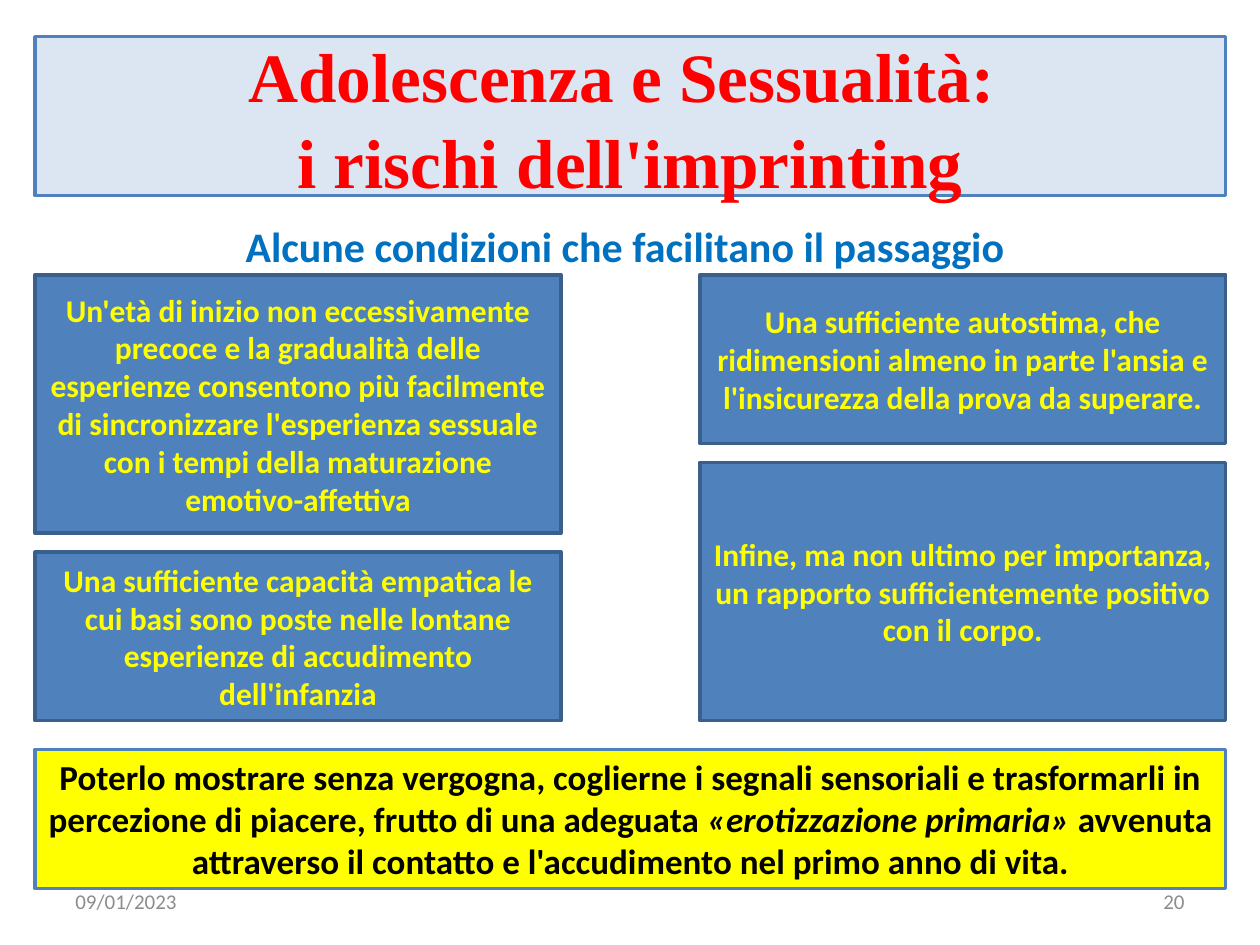
from pptx import Presentation
from pptx.dml.color import RGBColor
from pptx.enum.shapes import MSO_SHAPE as Shape
from pptx.enum.text import MSO_ANCHOR as Anchor, PP_ALIGN as Align
from pptx.util import Cm, Pt


def color(value):
    return RGBColor.from_string(value)


def add_block(place, texts, size, ink, fill=None, line=None, bold=True,
              align=Align.CENTER, anchor=Anchor.MIDDLE, face="Calibri"):
    box = [Cm(length) for length in place]
    if fill:
        block = slide.shapes.add_shape(Shape.RECTANGLE, *box)
        block.shadow.inherit = False
        block.fill.solid()
        block.fill.fore_color.rgb = color(fill)
        block.line.color.rgb = color(line)
        block.line.width = Pt(2)
    else:
        block = slide.shapes.add_textbox(*box)
    frame = block.text_frame
    frame.word_wrap = True
    frame.vertical_anchor = anchor
    paragraph = frame.paragraphs[0]
    paragraph.alignment = align
    font = paragraph.font
    font.name, font.size, font.bold = face, Pt(size), bold
    font.color.rgb = color(ink)
    if len(texts) == 1:
        paragraph.text = texts[0]
    else:
        for text in texts:
            paragraph.add_run().text = text
    return paragraph


prs = Presentation()
prs.slide_width, prs.slide_height = Cm(25.4), Cm(19.05)
slide = prs.slides.add_slide(prs.slide_layouts[6])

left, full_width = 0.71, 24
title = add_block((left, 0.74, full_width, 3.2),
                  ["Adolescenza e Sessualità: \vi rischi dell'imprinting"],
                  39.6, "FF0000", "DCE6F2", "4F81BD", face="Times New Roman")
title.line_spacing = 1.04

conclusion = add_block(
    (left, 15.11, full_width, 2.8),
    ["Poterlo mostrare senza vergogna, coglierne i segnali sensoriali e trasformarli in "
     "percezione di piacere, frutto di una adeguata ",
     "«erotizzazione primaria»",
     " avvenuta attraverso il contatto e l'accudimento nel primo anno di vita."],
    20, "000000", "FFFF00", "4F81BD", anchor=Anchor.TOP)
conclusion.runs[1].font.italic = True

for x, text, align in ((1.27, "09/01/2023", Align.LEFT), (18.2, "20", Align.RIGHT)):
    add_block((x, 17.66, 5.93, 1.01), [text], 12, "8C8C8C", bold=False, align=align)

add_block((0, 4.32, 25.4, 1.28), ["Alcune condizioni che facilitano il passaggio "],
          24, "0070C0", anchor=Anchor.TOP)

top, gap, card_width, tall, short = 5.54, 0.38, 10.6, 5.21, 3.4
columns = (
    (left, (
        (tall, "Un'età di inizio non eccessivamente precoce e la gradualità delle esperienze "
               "consentono più facilmente di sincronizzare l'esperienza sessuale con i tempi "
               "della maturazione emotivo-affettiva"),
        (short, "Una sufficiente capacità empatica le cui basi sono poste nelle lontane "
                "esperienze di accudimento dell'infanzia"))),
    (left + full_width - card_width, (
        (short, "Una sufficiente autostima, che ridimensioni almeno in parte l'ansia e "
                "l'insicurezza della prova da superare."),
        (tall, "Infine, ma non ultimo per importanza, un rapporto sufficientemente positivo "
               "con il corpo."))),
)
for x, conditions in columns:
    y = top
    for height, text in conditions:
        add_block((x, y, card_width, height), [text], 18, "FFFF00", "4F81BD", "3A5F8C")
        y += height + gap

prs.save("out.pptx")
